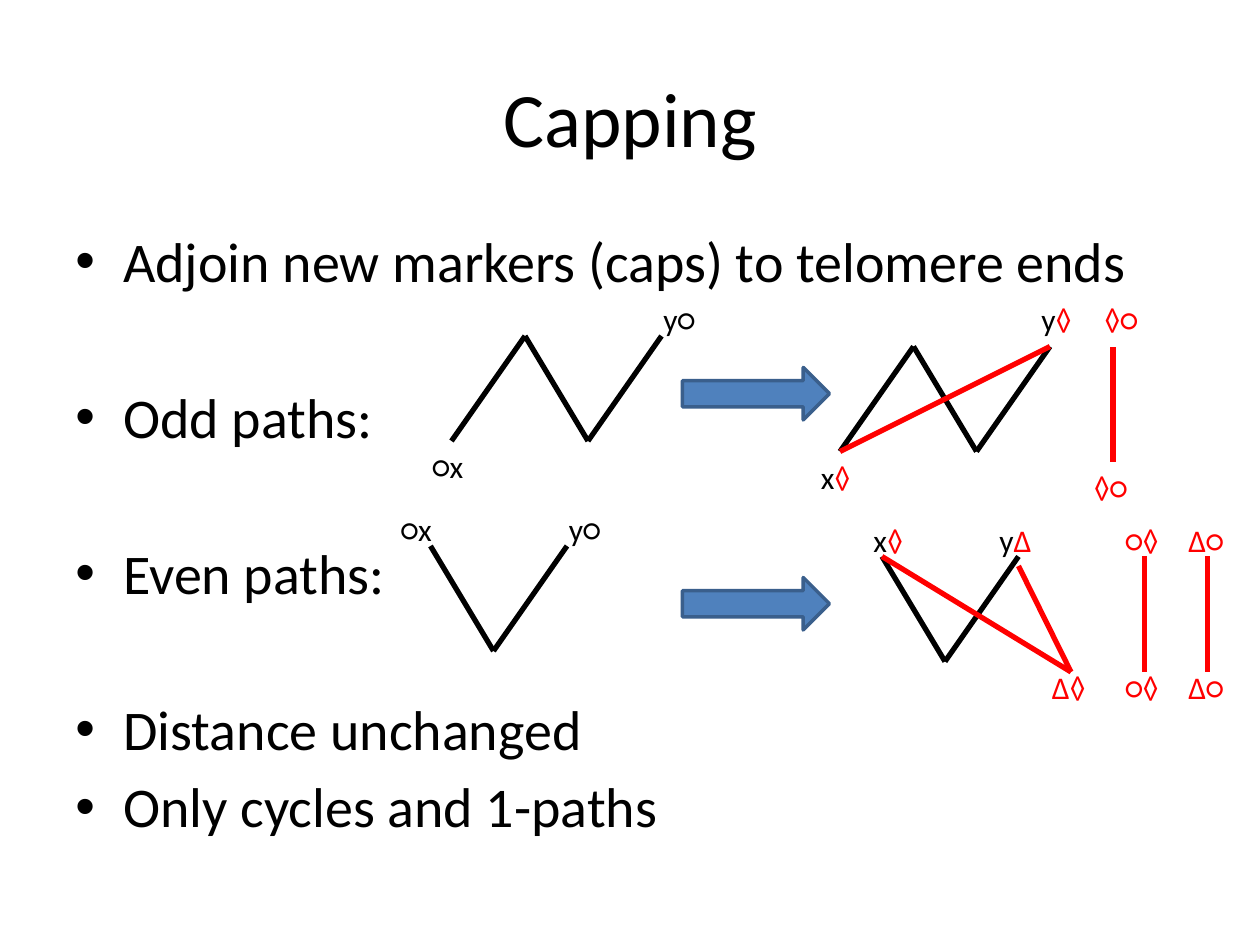
from itertools import pairwise

from pptx import Presentation
from pptx.dml.color import RGBColor
from pptx.enum.shapes import MSO_CONNECTOR, MSO_SHAPE
from pptx.enum.text import MSO_ANCHOR, PP_ALIGN
from pptx.oxml.ns import qn
from pptx.util import Inches, Pt
from lxml.etree import SubElement

BLACK, RED = "000000", "FF0000"

prs = Presentation()
prs.slide_width, prs.slide_height = Inches(10), Inches(7.5)
slide = prs.slides.add_slide(prs.slide_layouts[6])
shapes = slide.shapes
U = prs.slide_width / 120  # grid of 120 columns by 90 rows


def rgb(color):
    return RGBColor.from_string(color)


def add_run(p, text, size, color=BLACK):
    r = p.add_run()
    r.text = text
    r.font.name, r.font.size = "Calibri", Pt(size)
    r.font.color.rgb = rgb(color)


# Title
tf = shapes.add_textbox(Inches(0.5), Inches(0.3), Inches(9), Inches(1.25)).text_frame
tf.word_wrap, tf.vertical_anchor = True, MSO_ANCHOR.MIDDLE
p = tf.paragraphs[0]
p.alignment = PP_ALIGN.CENTER
add_run(p, "Capping", 44)

# Bullets: text, points of space before
bullets = [
    ("Adjoin new markers (caps) to telomere ends", 0),
    ("Odd paths:", 50.7),
    ("Even paths:", 50.7),
    ("Distance unchanged", 50.7),
    ("Only cycles and 1-paths", 5.8),
]
tf = shapes.add_textbox(Inches(0.5), Inches(1.75), Inches(9), Inches(4.95)).text_frame
tf.word_wrap = True
for i, (text, space) in enumerate(bullets):
    p = tf.add_paragraph() if i else tf.paragraphs[0]
    p.space_before = Pt(space)
    pPr = p._p.get_or_add_pPr()
    pPr.set("marL", str(Inches(0.38)))
    pPr.set("indent", str(-Inches(0.38)))
    SubElement(pPr, qn("a:buFont")).set("typeface", "Arial")
    SubElement(pPr, qn("a:buChar")).set("char", "•")
    add_run(p, text, 32)

# Paths as (column, row) points; red ones are the added caps
paths = [
    # odd, before and after
    (BLACK, [(43, 42), (50, 32), (56, 42), (63, 32)]),
    (BLACK, [(80, 43), (87, 33), (93, 43), (100, 33)]),
    (RED, [(80, 43), (100, 33)]),
    (RED, [(106, 44), (106, 33)]),
    # even, before and after
    (BLACK, [(41, 52), (47, 62), (54, 52)]),
    (BLACK, [(84, 53), (90, 63), (97, 53)]),
    (RED, [(84, 53), (102, 64), (97, 53.9)]),
    (RED, [(109, 64), (109, 53)]),
    (RED, [(115, 64), (115, 53)]),
]
for color, points in paths:
    for (x1, y1), (x2, y2) in pairwise(points):
        ends = [round(v * U) for v in (x1, y1, x2, y2)]
        line = shapes.add_connector(MSO_CONNECTOR.STRAIGHT, *ends)
        line.line.color.rgb, line.line.width = rgb(color), Pt(3)
        SubElement(line._element.spPr, qn("a:effectLst"))

# Arrows from before to after
for row in (35, 55):
    box = [round(v * U) for v in (65, row, 14, 5)]
    sp = shapes.add_shape(MSO_SHAPE.RIGHT_ARROW, *box)
    sp.shadow.inherit = False
    sp.fill.solid()
    sp.fill.fore_color.rgb = rgb("4F81BD")
    sp.line.color.rgb, sp.line.width = rgb("3A5F8C"), Pt(2)

# End labels: column, row, black part, red part
labels = [
    (40, 42, "○x", ""), (62, 28, "y○", ""),
    (77, 43, "x", "◊"), (98, 28, "y", "◊"),
    (103, 44, "", "◊○"), (104, 28, "", "◊○"),
    (37, 48, "○x", ""), (53, 48, "y○", ""),
    (82, 49, "x", "◊"), (94, 49, "y", "∆"),
    (99, 63, "", "∆◊"),
    (106, 49, "", "○◊"), (106, 63, "", "○◊"),
    (112, 49, "", "∆○"), (112, 63, "", "∆○"),
]
for col, row, marker, cap in labels:
    box = [round(v * U) for v in (col, row, 6, 4.8)]
    tf = shapes.add_textbox(*box).text_frame
    tf.word_wrap = True
    for text, color in ((marker, BLACK), (cap, RED)):
        if text:
            add_run(tf.paragraphs[0], text, 18, color)

prs.save("out.pptx")
